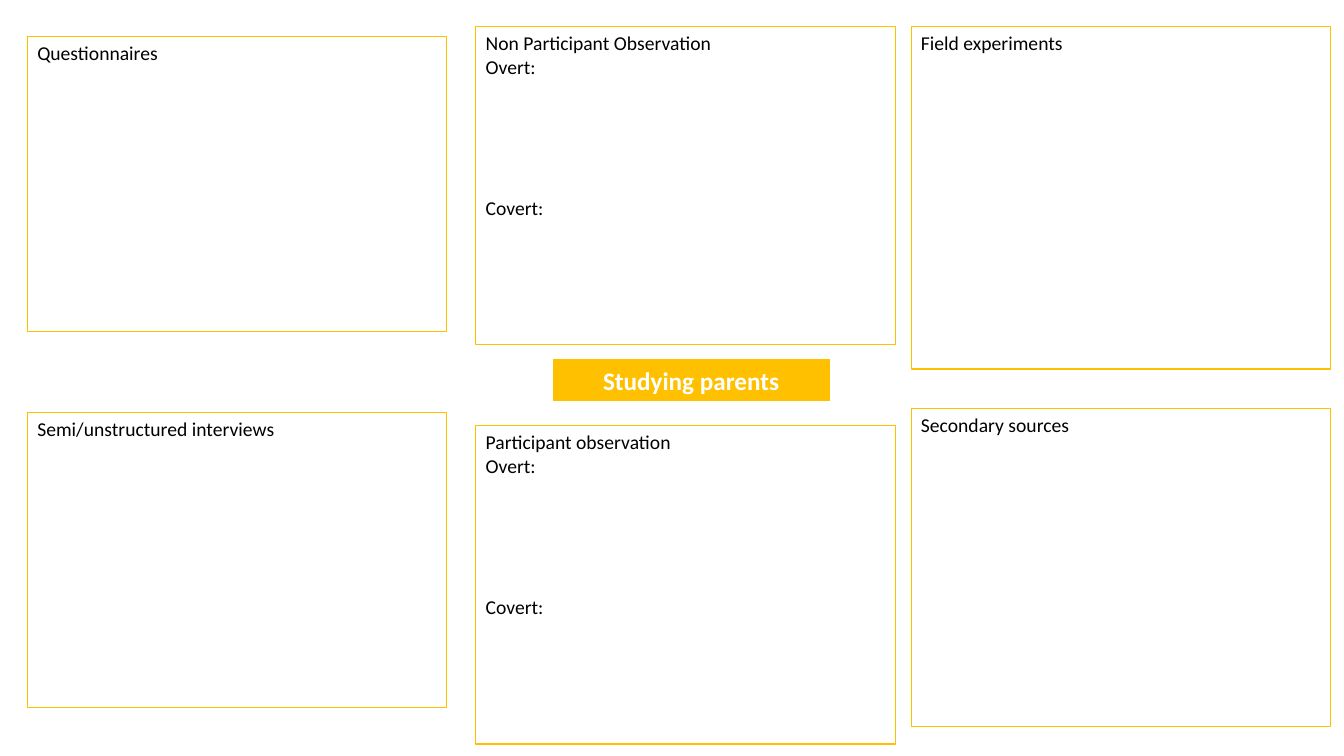
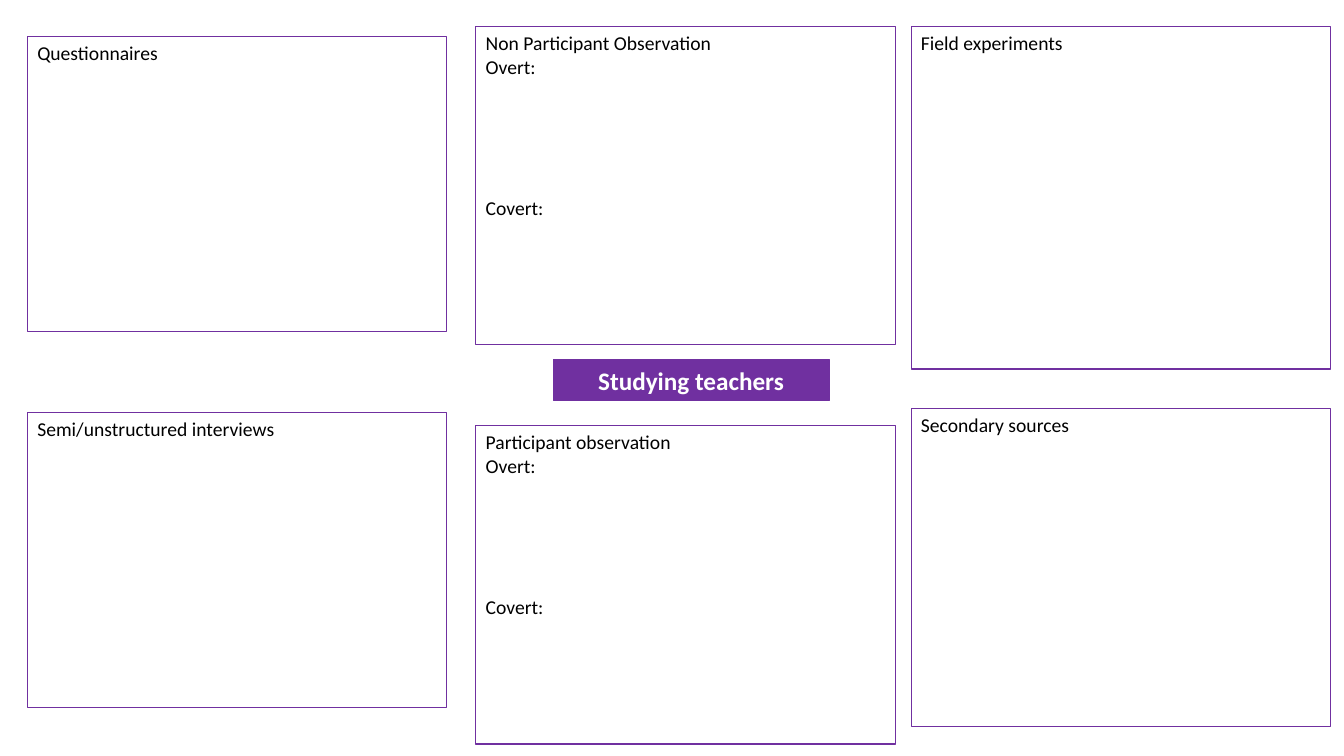
from pptx import Presentation
from pptx.dml.color import RGBColor
from pptx.enum.shapes import MSO_SHAPE
from pptx.enum.text import MSO_ANCHOR, PP_ALIGN
from pptx.util import Cm, Pt

AMBER = RGBColor(0xFF, 0xC0, 0x00)
PURPLE = RGBColor(0x70, 0x30, 0xA0)
WHITE = RGBColor(0xFF, 0xFF, 0xFF)
BLACK = RGBColor(0x00, 0x00, 0x00)

COLUMNS = (0.69, 11.99, 22.96)
COVERAGE = (("Overt:", 0), ("Covert:", 84))
METHODS = (
    ("Questionnaires", 0, 0.91, 7.44, ()),
    ("Semi/unstructured interviews", 0, 10.39, 7.44, ()),
    ("Non Participant Observation", 1, 0.66, 8.03, COVERAGE),
    ("Participant observation", 1, 10.72, 8.03, COVERAGE),
    ("Field experiments", 2, 0.66, 8.64, ()),
    ("Secondary sources", 2, 10.29, 8.03, ()),
)
TOPICS = (("Studying parents", AMBER), ("Studying teachers", PURPLE))


class Worksheet:
    """Holds the shared style and the slide being filled."""

    font_name = "Calibri"
    box_width = 10.57

    def __init__(self):
        self.presentation = Presentation()
        self.presentation.slide_width = Cm(33.87)
        self.presentation.slide_height = Cm(19.05)

    def start_slide(self, accent):
        self.accent = accent
        self.slide = self.presentation.slides.add_slide(self.presentation.slide_layouts[6])

    def rectangle(self, left, top, width, height):
        shape = self.slide.shapes.add_shape(
            MSO_SHAPE.RECTANGLE, Cm(left), Cm(top), Cm(width), Cm(height))
        shape.shadow.inherit = False
        shape.line.color.rgb = self.accent
        shape.line.width = Pt(0.75)
        shape.text_frame.word_wrap = True
        shape.text_frame.vertical_anchor = MSO_ANCHOR.TOP
        return shape

    def add_text(self, paragraph, text, size, color, bold=False, alignment=PP_ALIGN.LEFT):
        paragraph.alignment = alignment
        run = paragraph.add_run()
        run.text = text
        run.font.name = self.font_name
        run.font.size = Pt(size)
        run.font.bold = bold
        run.font.color.rgb = color

    def banner(self, text):
        shape = self.rectangle(13.94, 9.07, 6.96, 1.02)
        shape.fill.solid()
        shape.fill.fore_color.rgb = self.accent
        self.add_text(shape.text_frame.paragraphs[0], text, 18, WHITE, True, PP_ALIGN.CENTER)

    def method_box(self, heading, column, top, height, prompts):
        shape = self.rectangle(COLUMNS[column], top, self.box_width, height)
        shape.fill.background()
        self.add_text(shape.text_frame.paragraphs[0], heading, 14, BLACK)
        for prompt, space_before in prompts:
            paragraph = shape.text_frame.add_paragraph()
            paragraph.space_before = Pt(space_before)
            self.add_text(paragraph, prompt, 14, BLACK)


def main():
    worksheet = Worksheet()
    for topic, accent in TOPICS:
        worksheet.start_slide(accent)
        worksheet.banner(topic)
        for method in METHODS:
            worksheet.method_box(*method)
    worksheet.presentation.save("out.pptx")


if __name__ == "__main__":
    main()
